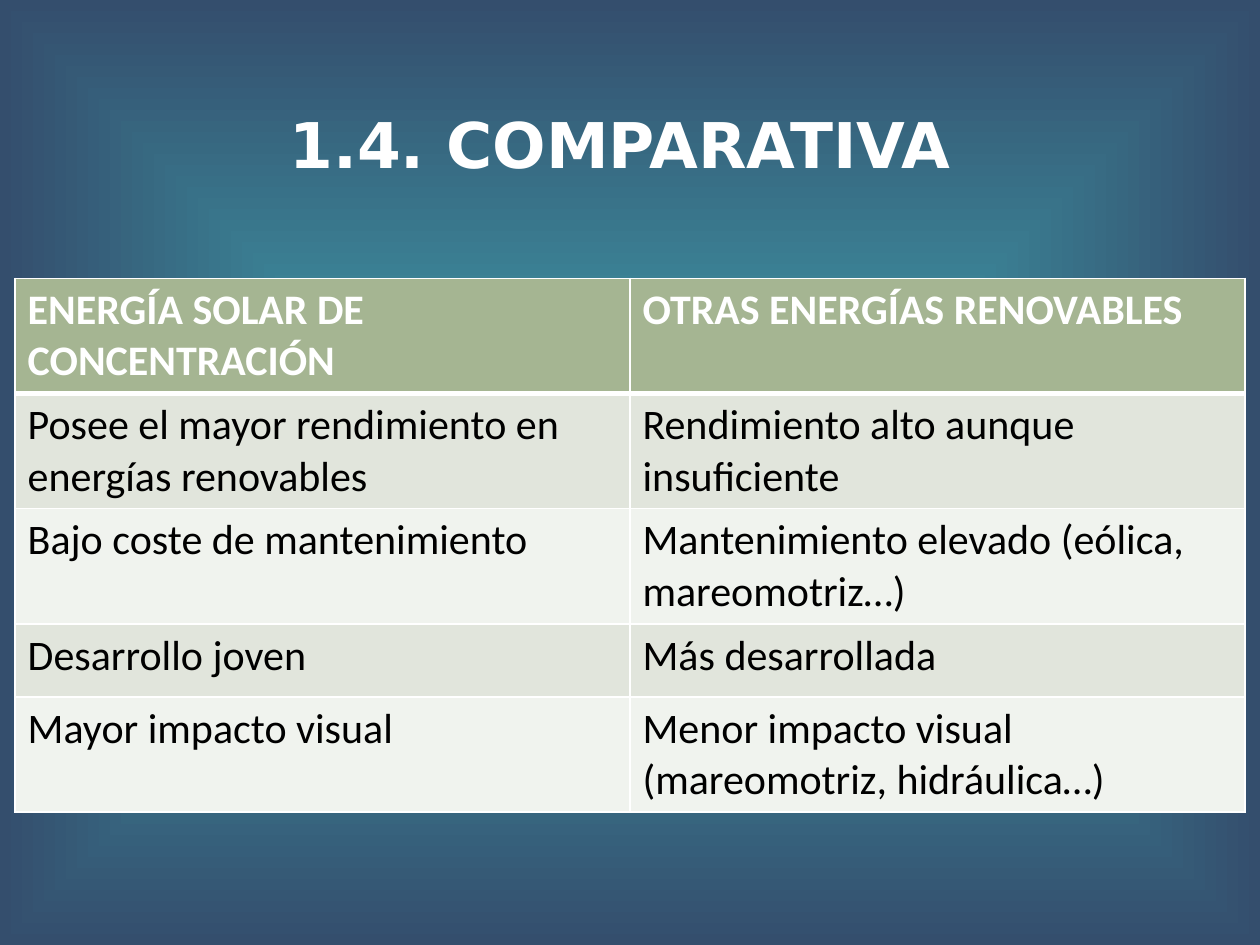
from lxml import etree
from pptx import Presentation
from pptx.dml.color import RGBColor
from pptx.enum.text import MSO_ANCHOR, MSO_AUTO_SIZE, PP_ALIGN
from pptx.oxml.ns import qn
from pptx.util import Inches, Pt

TOP = MSO_ANCHOR.TOP
FIXED = MSO_AUTO_SIZE.NONE
CENTER = PP_ALIGN.CENTER
TITLE_ONLY = 5

COLORS = {
    "glow": "3FA4AF",
    "edge": "344E6D",
    "white": "FFFFFF",
    "black": "000000",
    "head": "A5B592",
    "odd": "E1E5DC",
    "even": "F0F3EE",
}

ROWS = [
    ("ENERGÍA SOLAR DE CONCENTRACIÓN", "OTRAS ENERGÍAS RENOVABLES"),
    ("Posee el mayor rendimiento en energías renovables",
     "Rendimiento alto aunque insuficiente"),
    ("Bajo coste de mantenimiento",
     "Mantenimiento elevado (eólica, mareomotriz…)"),
    ("Desarrollo joven", "Más desarrollada"),
    ("Mayor impacto visual",
     "Menor impacto visual (mareomotriz, hidráulica…)"),
]
HEIGHTS = [0.9, 0.91, 0.91, 0.58, 0.91]


def color(name):
    return RGBColor.from_string(COLORS[name])


class Deck:
    def __init__(self):
        self.prs = Presentation()
        self.prs.slide_width = Inches(10)
        self.prs.slide_height = Inches(7.5)
        self.slide = self.prs.slides.add_slide(
            self.prs.slide_layouts[TITLE_ONLY])

    def style(self, para, face, size, name, bold):
        font = para.font
        font.name = face
        font.size = Pt(size)
        font.bold = bold
        font.color.rgb = color(name)

    def backdrop(self, inner, outer):
        fill = self.slide.background.fill
        fill.gradient()
        for stop, name in zip(fill.gradient_stops, (inner, outer)):
            stop.color.rgb = color(name)
        grad = next(self.slide.element.iter(qn("a:gradFill")))
        grad.remove(grad.find(qn("a:lin")))
        shade = etree.Element(qn("a:path"), {"path": "shape"})
        etree.SubElement(shade, qn("a:fillToRect"),
                         {side: "50000" for side in "ltrb"})
        grad.find(qn("a:gsLst")).addnext(shade)

    def title(self, text, left, top, width, height):
        shape = self.slide.shapes.title
        shape.left, shape.top = Inches(left), Inches(top)
        shape.width, shape.height = Inches(width), Inches(height)
        frame = shape.text_frame
        frame.text = text
        frame.auto_size = FIXED
        frame.vertical_anchor = TOP
        frame.margin_top = 0
        para = frame.paragraphs[0]
        para.alignment = CENTER
        self.style(para, "DejaVu Sans", 36, "white", True)

    def border(self, cell, widths):
        props = cell._tc.get_or_add_tcPr()
        for spot, (side, width) in enumerate(widths.items()):
            line = etree.Element(qn("a:ln" + side), {"w": str(Pt(width))})
            solid = etree.SubElement(line, qn("a:solidFill"))
            etree.SubElement(solid, qn("a:srgbClr"), {"val": COLORS["white"]})
            props.insert(spot, line)

    def table(self, rows, heights, left, top, width):
        count = len(rows[0])
        grid = self.slide.shapes.add_table(
            len(rows), count, Inches(left), Inches(top),
            Inches(width), Inches(sum(heights))).table
        for col in grid.columns:
            col.width = Inches(width / count)
        for r, (texts, height) in enumerate(zip(rows, heights)):
            grid.rows[r].height = Inches(height)
            head = r == 0
            shade = "head" if head else "odd" if r % 2 else "even"
            for c, text in enumerate(texts):
                cell = grid.cell(r, c)
                cell.text = text
                cell.fill.solid()
                cell.fill.fore_color.rgb = color(shade)
                self.style(cell.text_frame.paragraphs[0], "Calibri", 24,
                           "white" if head else "black", head)
                self.border(cell, {"L": 1, "R": 1, "T": 3 if r == 1 else 1,
                                   "B": 3 if head else 1})

    def save(self):
        self.prs.save("out.pptx")


def main():
    deck = Deck()
    deck.backdrop("glow", "edge")
    deck.title("1.4. COMPARATIVA", -0.83, 0.84, 11.5, 1.45)
    deck.table(ROWS, HEIGHTS, 0.12, 2.21, 9.76)
    deck.save()


if __name__ == "__main__":
    main()
